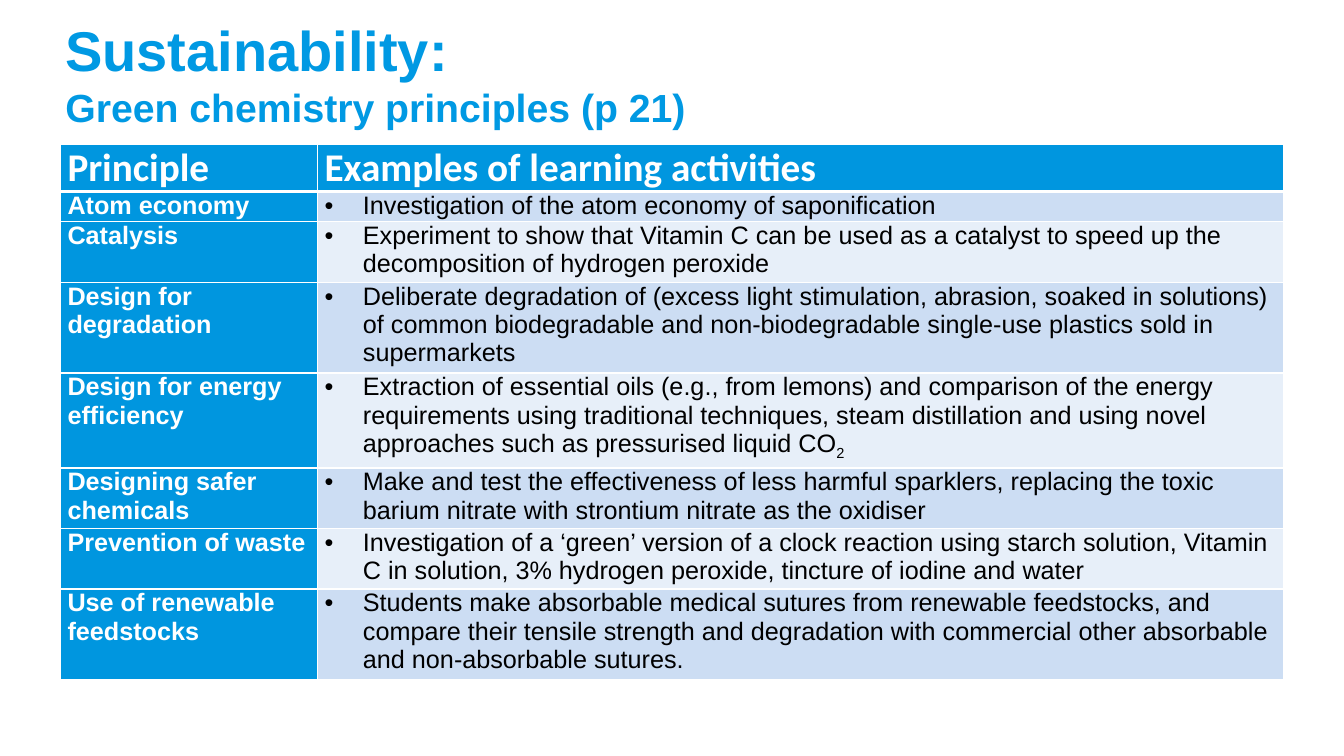
from dataclasses import dataclass

from lxml.etree import SubElement
from pptx import Presentation
from pptx.dml.color import RGBColor as RGB
from pptx.enum.text import MSO_ANCHOR as Anchor
from pptx.oxml.ns import qn
from pptx.util import Inches, Pt

WIDTH, HEIGHT = 13.33, 7.5


@dataclass(frozen=True)
class Theme:
    title: str = "0099E3"
    accent: str = "0096DF"
    bands: tuple = ("CCDDF3", "E7EFF9")
    light: str = "FFFFFF"
    dark: str = "000000"
    font: str = "Arial"
    head_font: str = "Calibri"
    title_size: int = 40
    head_size: int = 28
    body_size: int = 18


THEME = Theme()
COLUMNS = (2.55, 9.58)
HEAD_ROW, LINE = 0.47, 0.28
SUBSCRIPT = "₂"

HEADINGS = ("Principle", "Examples of learning activities")
# Principle, activity, number of text lines
PRINCIPLES = (
    ("Atom economy", "Investigation of the atom economy of saponification", 1),
    ("Catalysis",
     "Experiment to show that Vitamin C can be used as a catalyst to speed up "
     "the decomposition of hydrogen peroxide", 2),
    ("Design for degradation",
     "Deliberate degradation of (excess light stimulation, abrasion, soaked in "
     "solutions) of common biodegradable and non-biodegradable single-use "
     "plastics sold in supermarkets", 3),
    ("Design for energy efficiency",
     "Extraction of essential oils (e.g., from lemons) and comparison of the "
     "energy requirements using traditional techniques, steam distillation and "
     "using novel approaches such as pressurised liquid CO₂", 3),
    ("Designing safer chemicals",
     "Make and test the effectiveness of less harmful sparklers, replacing the "
     "toxic barium nitrate with strontium nitrate as the oxidiser", 2),
    ("Prevention of waste",
     "Investigation of a ‘green’ version of a clock reaction using starch "
     "solution, Vitamin C in solution, 3% hydrogen peroxide, tincture of iodine "
     "and water", 2),
    ("Use of renewable feedstocks",
     "Students make absorbable medical sutures from renewable feedstocks, and "
     "compare their tensile strength and degradation with commercial other "
     "absorbable and non-absorbable sutures.", 3),
)


def add_text(p, text, *, size=THEME.body_size, color=THEME.light, bold=True,
             font=THEME.font, baseline=None):
    r = p.add_run()
    r.text = text
    r.font.size, r.font.bold, r.font.name = Pt(size), bold, font
    r.font.color.rgb = RGB.from_string(color)
    if baseline is not None:
        r.font._element.set("baseline", str(baseline))


def add_bullet(p, indent=0.38):
    pPr = p._p.get_or_add_pPr()
    pPr.set("marL", str(Inches(indent)))
    pPr.set("indent", str(-Inches(indent)))
    SubElement(pPr, qn("a:buFont"), typeface=THEME.font)
    SubElement(pPr, qn("a:buChar"), char="•")


def set_borders(cell, **widths):
    """Draw white borders; widths maps L, R, T and B to points."""
    tcPr = cell._tc.get_or_add_tcPr()
    for i, (side, width) in enumerate(widths.items()):
        ln = tcPr.makeelement(qn(f"a:ln{side}"), {"w": str(Pt(width))})
        fill = SubElement(ln, qn("a:solidFill"))
        SubElement(fill, qn("a:srgbClr"), val=THEME.light)
        tcPr.insert(i, ln)


def style_cell(cell, fill, top=1, bottom=1):
    """Set fill, margins and borders; return the first paragraph."""
    cell.fill.solid()
    cell.fill.fore_color.rgb = RGB.from_string(fill)
    cell.margin_left = cell.margin_right = Inches(0.07)
    cell.margin_top = cell.margin_bottom = 0
    set_borders(cell, L=1, R=1, T=top, B=bottom)
    p = cell.text_frame.paragraphs[0]
    p.space_after = Pt(6)
    return p


def add_title(slide):
    sp = slide.shapes.add_textbox(Inches(0.55), Inches(0.1),
                                  Inches(12.47), Inches(1.25))
    tf = sp.text_frame
    tf.word_wrap, tf.vertical_anchor = True, Anchor.MIDDLE
    p = tf.paragraphs[0]
    add_text(p, "Sustainability:", size=THEME.title_size, color=THEME.title)
    p.add_line_break()
    add_text(p, "Green chemistry principles (p 21)", size=THEME.head_size,
             color=THEME.title)


def add_principles(slide):
    heights = [HEAD_ROW] + [lines * LINE for _, _, lines in PRINCIPLES]
    table = slide.shapes.add_table(
        len(heights), len(COLUMNS), Inches(0.6), Inches(1.43),
        Inches(sum(COLUMNS)), Inches(sum(heights))).table
    for column, width in zip(table.columns, COLUMNS):
        column.width = Inches(width)
    for row, height in zip(table.rows, heights):
        row.height = Inches(height)

    for col, heading in enumerate(HEADINGS):
        p = style_cell(table.cell(0, col), THEME.accent, bottom=3)
        add_text(p, heading, size=THEME.head_size, font=THEME.head_font)

    for row, (principle, activity, _) in enumerate(PRINCIPLES, 1):
        top = 3 if row == 1 else 1
        add_text(style_cell(table.cell(row, 0), THEME.accent, top), principle)
        p = style_cell(table.cell(row, 1), THEME.bands[(row - 1) % 2], top)
        add_bullet(p)
        body, sub, _ = activity.partition(SUBSCRIPT)
        add_text(p, body, color=THEME.dark, bold=False)
        if sub:
            add_text(p, "2", color=THEME.dark, bold=False, baseline=-25000)


def main():
    prs = Presentation()
    prs.slide_width, prs.slide_height = Inches(WIDTH), Inches(HEIGHT)
    slide = prs.slides.add_slide(prs.slide_layouts[6])
    add_title(slide)
    add_principles(slide)
    prs.save("out.pptx")


if __name__ == "__main__":
    main()
